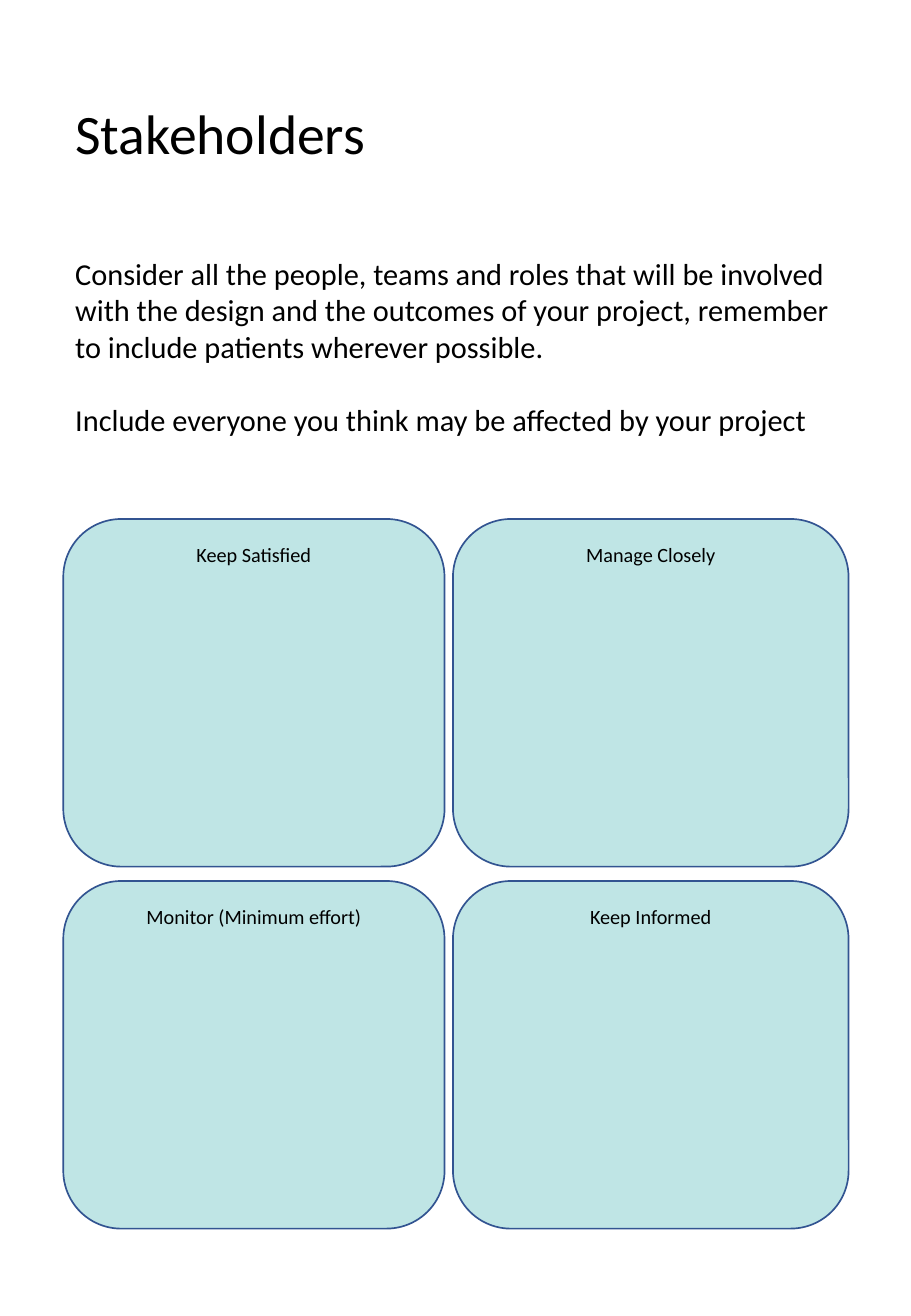
"""Build the stakeholder power and interest worksheet."""
from dataclasses import dataclass

from lxml import etree
from pptx import Presentation
from pptx import util as u
from pptx.dml.color import RGBColor
from pptx.enum import shapes, text
from pptx.oxml.ns import qn

BLACK = RGBColor(0x00, 0x00, 0x00)
TEAL = RGBColor(0x00, 0x9A, 0x98)
NAVY = RGBColor(0x32, 0x54, 0x91)
FONT = "Calibri"

LEFT, CONTENT_WIDTH = 37.5, 466
COLUMNS = ((LEFT, 226), (268.5, 234.5))
ROW_TOP, ROW_HEIGHT, ROW_GAP = 307.5, 206, 8.5
GUIDANCE = (
    "Consider all the people, teams and roles that will be involved with the design "
    "and the outcomes of your project, remember to include patients wherever possible.",
    "Include everyone you think may be affected by your project",
)


@dataclass(frozen=True)
class Quadrant:
    label: str
    column: int
    row: int


QUADRANTS = (
    Quadrant("Keep Satisfied", 0, 0),
    Quadrant("Monitor (Minimum effort)", 0, 1),
    Quadrant("Keep Informed", 1, 1),
    Quadrant("Manage Closely", 1, 0),
)


def style(paragraph, size: float, align: text.PP_ALIGN) -> None:
    paragraph.alignment = align
    for run in paragraph.runs:
        run.font.name = FONT
        run.font.size = u.Pt(size)
        run.font.color.rgb = BLACK


def write_title(slide) -> None:
    title = slide.shapes.title
    title.left, title.top = u.Pt(LEFT), u.Pt(42)
    title.width, title.height = u.Pt(CONTENT_WIDTH), u.Pt(77.5)
    frame = title.text_frame
    frame.text = "Stakeholders"
    frame.auto_size = text.MSO_AUTO_SIZE.NONE
    frame.vertical_anchor = text.MSO_ANCHOR.MIDDLE
    frame.paragraphs[0].line_spacing = 0.9
    style(frame.paragraphs[0], 33, text.PP_ALIGN.LEFT)


def write_guidance(slide) -> None:
    guidance = slide.shapes.add_textbox(
        u.Pt(LEFT), u.Pt(147.5), u.Pt(CONTENT_WIDTH), u.Pt(116.5))
    frame = guidance.text_frame
    frame.word_wrap = True
    frame.auto_size = text.MSO_AUTO_SIZE.SHAPE_TO_FIT_TEXT
    frame.text = "\n".join(GUIDANCE)
    for paragraph in frame.paragraphs:
        style(paragraph, 18, text.PP_ALIGN.LEFT)
    frame.paragraphs[1].space_before = u.Pt(22)


def draw_quadrant(slide, quadrant: Quadrant) -> None:
    left, width = COLUMNS[quadrant.column]
    top = ROW_TOP + quadrant.row * (ROW_HEIGHT + ROW_GAP)
    panel = slide.shapes.add_shape(
        shapes.MSO_SHAPE.ROUNDED_RECTANGLE,
        u.Pt(left), u.Pt(top), u.Pt(width), u.Pt(ROW_HEIGHT))
    panel.shadow.inherit = False
    panel.fill.solid()
    panel.fill.fore_color.rgb = TEAL
    tint = panel.fill._xPr.find(qn("a:solidFill"))[0]
    etree.SubElement(tint, qn("a:alpha")).set("val", "25000")
    panel.line.color.rgb = NAVY
    panel.line.width = u.Pt(1)
    frame = panel.text_frame
    frame.text = quadrant.label
    frame.vertical_anchor = text.MSO_ANCHOR.TOP
    style(frame.paragraphs[0], 12, text.PP_ALIGN.CENTER)


def main() -> None:
    deck = Presentation()
    deck.slide_width, deck.slide_height = u.Pt(540), u.Pt(779.76)
    slide = deck.slides.add_slide(deck.slide_layouts.get_by_name("Title Only"))
    write_title(slide)
    for quadrant in QUADRANTS:
        draw_quadrant(slide, quadrant)
    write_guidance(slide)
    deck.save("out.pptx")


if __name__ == "__main__":
    main()
